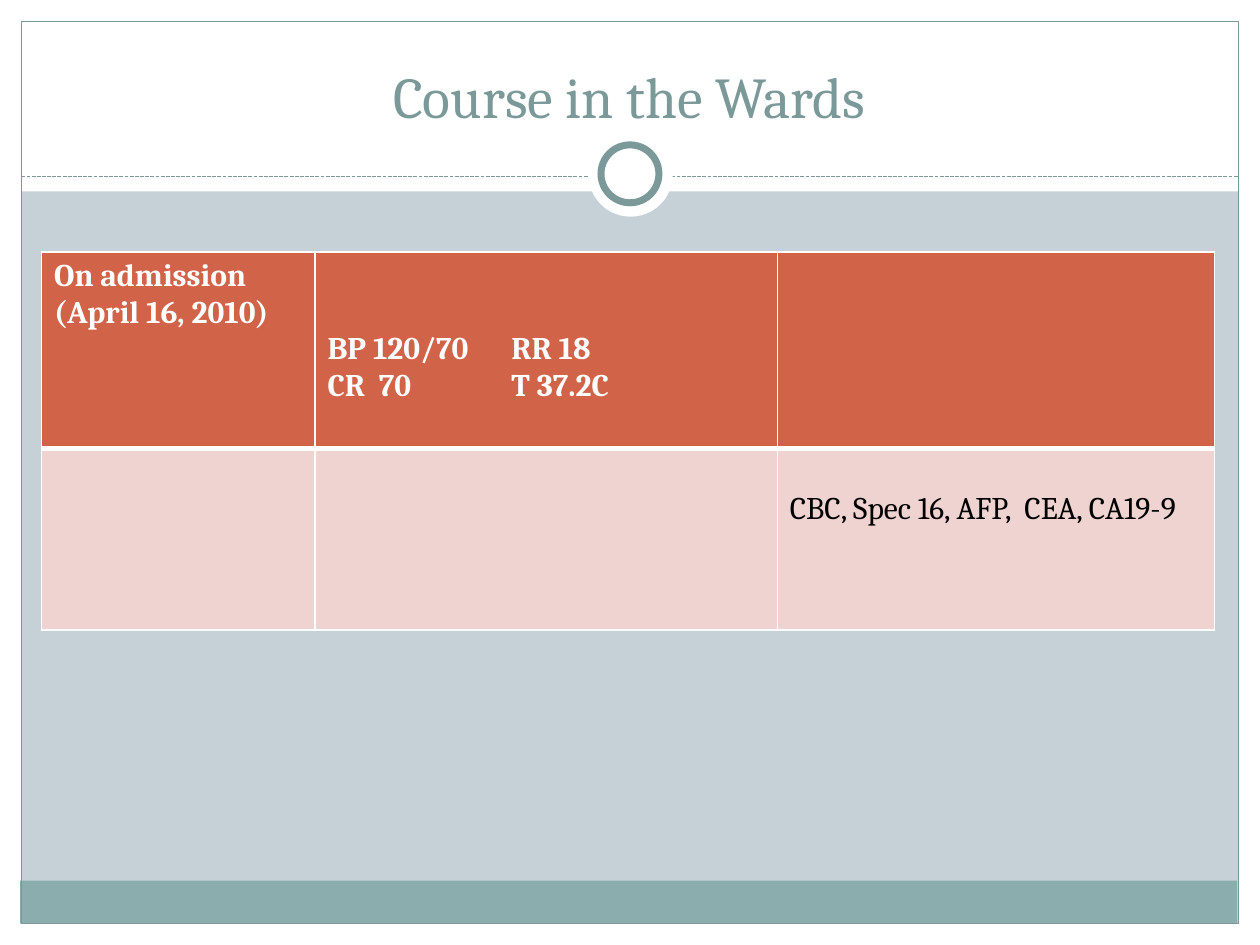
from dataclasses import dataclass

from lxml.etree import SubElement
from pptx import Presentation
from pptx.dml.color import RGBColor as RGB
from pptx.enum.dml import MSO_LINE as Dash
from pptx.enum.shapes import MSO_CONNECTOR as Connector, MSO_SHAPE as Shape
from pptx.enum.text import MSO_ANCHOR as Anchor, PP_ALIGN as Align
from pptx.oxml.ns import qn
from pptx.util import Inches, Pt


@dataclass(frozen=True)
class Theme:
    font: str = "Cambria"
    title_size: int = 33
    body_size: int = 18
    white: str = "FFFFFF"
    black: str = "000000"
    background: str = "C5D1D7"
    accent: str = "7C999A"
    footer: str = "8CADAE"
    header_row: str = "D16349"
    body_row: str = "EED3D0"


theme = Theme()


def add_panel(kind, box, fill=None, line=None, width=0.75):
    shape = slide.shapes.add_shape(kind, *map(Inches, box))
    shape.shadow.inherit = False
    if fill:
        shape.fill.solid()
        shape.fill.fore_color.rgb = RGB.from_string(fill)
    else:
        shape.fill.background()
    if line:
        shape.line.color.rgb = RGB.from_string(line)
        shape.line.width = Pt(width)
    else:
        shape.line.fill.background()


def style_font(paragraph, size, color, bold=False):
    font = paragraph.font
    font.name, font.size, font.bold = theme.font, Pt(size), bold
    font.color.rgb = RGB.from_string(color)


presentation = Presentation()
presentation.slide_width, presentation.slide_height = Inches(10), Inches(7.5)
slide = presentation.slides.add_slide(presentation.slide_layouts[6])
slide.background.fill.solid()
slide.background.fill.fore_color.rgb = RGB.from_string(theme.background)

margins = [(0, 7.33, 10, 0.17), (0, 0, 10, 1.52), (0, 0, 0.17, 7.5), (9.83, 0, 0.17, 7.5)]
for box in margins:
    add_panel(Shape.RECTANGLE, box, theme.white)
add_panel(Shape.RECTANGLE, (0.16, 6.99, 9.66, 0.34), theme.footer)
add_panel(Shape.RECTANGLE, (0.17, 0.17, 9.66, 7.16), line=theme.accent)

divider = slide.shapes.add_connector(
    Connector.STRAIGHT, Inches(0.17), Inches(1.4), Inches(9.83), Inches(1.4)
)
divider.line.color.rgb = RGB.from_string(theme.accent)
divider.line.width = Pt(0.75)
divider.line.dash_style = Dash.SQUARE_DOT
SubElement(divider._element.spPr, qn("a:effectLst"))

add_panel(Shape.OVAL, (4.67, 1.05, 0.67, 0.67), theme.white)
add_panel(Shape.OVAL, (4.77, 1.15, 0.46, 0.46), theme.white, theme.accent, 4)

title = slide.shapes.add_textbox(Inches(0.33), Inches(0.25), Inches(9.33), Inches(0.83))
title.text_frame.word_wrap = True
title.text_frame.vertical_anchor = Anchor.BOTTOM
heading = title.text_frame.paragraphs[0]
heading.text = "Course in the Wards"
heading.alignment = Align.CENTER
style_font(heading, theme.title_size, theme.accent)

column_widths = [2.17, 3.67, 3.47]
row_heights = [1.56, 1.44]
row_styles = [(theme.header_row, theme.white, True), (theme.body_row, theme.black, False)]
cell_texts = [
    ["On admission\n(April 16, 2010)", "BP 120/70\tRR 18\nCR  70\tT 37.2C", ""],
    ["", "", "CBC, Spec 16, AFP,  CEA, CA19-9"],
]
top_margins = [[0.05, 0.63, 0.05], [0.05, 0.05, 0.34]]
border_widths = [
    {"lnL": 1, "lnR": 1, "lnT": 1, "lnB": 3},
    {"lnL": 1, "lnR": 1, "lnT": 3, "lnB": 1},
]

table = slide.shapes.add_table(
    2, 3, Inches(0.33), Inches(2), Inches(sum(column_widths)), Inches(sum(row_heights))
).table
for column, width in zip(table.columns, column_widths):
    column.width = Inches(width)
for row, height in zip(table.rows, row_heights):
    row.height = Inches(height)

for row_index, (fill, color, bold) in enumerate(row_styles):
    for column_index, text in enumerate(cell_texts[row_index]):
        cell = table.cell(row_index, column_index)
        cell.margin_top = Inches(top_margins[row_index][column_index])
        properties = cell._tc.get_or_add_tcPr()
        for side, width in border_widths[row_index].items():
            border = SubElement(properties, qn(f"a:{side}"), w=str(Pt(width)))
            border_fill = SubElement(border, qn("a:solidFill"))
            SubElement(border_fill, qn("a:srgbClr"), val=theme.white)
        cell.fill.solid()
        cell.fill.fore_color.rgb = RGB.from_string(fill)
        cell.text = text
        for paragraph in cell.text_frame.paragraphs:
            if "\t" in paragraph.text:
                tabs = SubElement(paragraph._p.get_or_add_pPr(), qn("a:tabLst"))
                SubElement(tabs, qn("a:tab"), pos=str(Inches(1.46)), algn="l")
            style_font(paragraph, theme.body_size, color, bold)

presentation.save("out.pptx")
